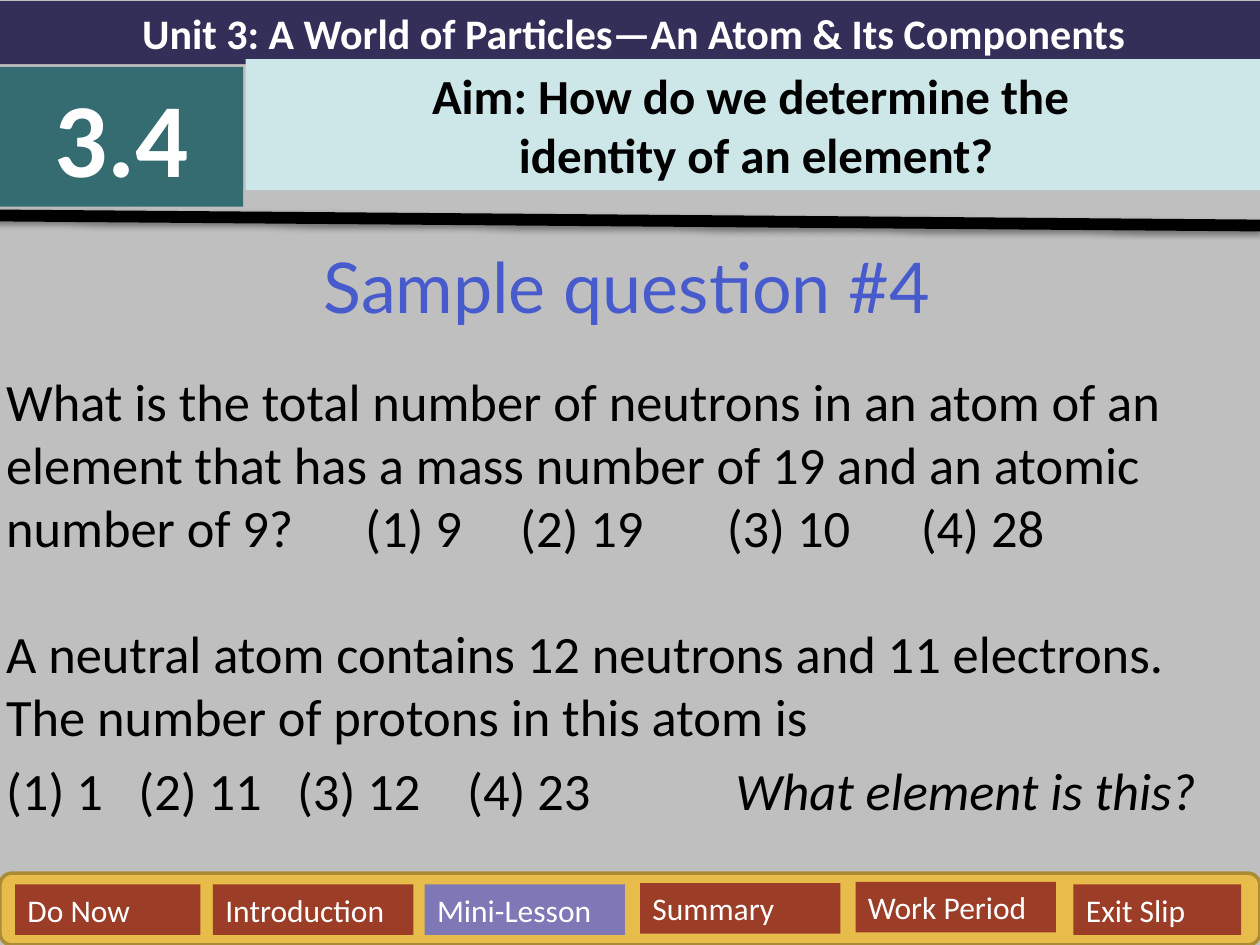
import pptx
import pptx.util
import pptx.dml.color
import pptx.enum.shapes
import pptx.enum.text
import pptx.oxml
import pptx.oxml.ns

Inches = pptx.util.Inches
Pt = pptx.util.Pt
Shape = pptx.enum.shapes.MSO_SHAPE
Align = pptx.enum.text.PP_ALIGN

COLORS = {
    "background": "BFBFBF", "unit": "342F59", "number": "346C71", "aim": "CDE6E8",
    "bar": "E8BC4A", "bar_line": "AC8B37", "button": "9C3D28", "current": "7E78B7",
    "heading": "475BCD", "black": "000000", "white": "FFFFFF",
}

# lines, (left, top, width, height), fill, text colour, size
HEADERS = [
    (["Unit 3: A World of Particles—An Atom & Its Components"],
     (0, 0.01, 10.06, 0.5), "unit", "white", 24),
    (["3.4"], (0, 0.53, 1.93, 1.11), "number", "white", 60),
    (["Aim: How do we determine the ", "identity of an element?"],
     (1.95, 0.47, 8.1, 1.04), "aim", "black", 28),
]

# label, left, top, width
BUTTONS = [
    ("Do Now", 0.12, 7.02, 1.47),
    ("Introduction", 1.69, 7.02, 1.59),
    ("Mini-Lesson", 3.37, 7.02, 1.59),
    ("Summary", 5.08, 7.01, 1.59),
    ("Work Period", 6.79, 7, 1.59),
    ("Exit Slip", 8.52, 7.02, 1.33),
]
BUTTON_HEIGHT = 0.4
CURRENT_BUTTON = "Mini-Lesson"

HEADING = "Sample question #4"
# text, space before in points, tab stops in inches, closing remark
QUESTIONS = [
    ("What is the total number of neutrons in an atom of an element that has a mass "
     "number of 19 and an atomic number of 9?\t(1) 9\t(2) 19\t(3) 10\t(4) 28",
     24, [2.85, 4.08, 5.72, 7.26], ""),
    ("A neutral atom contains 12 neutrons and 11 electrons. "
     "The number of protons in this atom is", 36, [], ""),
    ("(1) 1\t(2) 11\t(3) 12\t(4) 23\t", 6.5,
     [1.05, 2.31, 3.66, 5.79], "What element is this?"),
]


def rgb(name):
    return pptx.dml.color.RGBColor.from_string(COLORS[name])


def add_run(paragraph, text, size=30, color="black", font="Calibri",
            bold=False, italic=False):
    run = paragraph.add_run()
    run.text = text
    run.font.name = font
    run.font.size = Pt(size)
    run.font.bold = bold
    run.font.italic = italic
    run.font.color.rgb = rgb(color)


def add_box(slide, box, fill, preset=Shape.RECTANGLE, line=None):
    shape = slide.shapes.add_shape(preset, *map(Inches, box))
    shape.shadow.inherit = False
    shape.fill.solid()
    shape.fill.fore_color.rgb = rgb(fill)
    if line:
        shape.line.color.rgb = rgb(line)
        shape.line.width = Pt(2)
    else:
        shape.line.fill.background()
    return shape


def add_label(slide, lines, box, fill, align, **text_format):
    frame = add_box(slide, box, fill).text_frame
    frame.word_wrap = True
    frame.vertical_anchor = pptx.enum.text.MSO_ANCHOR.TOP
    for index, line in enumerate(lines):
        paragraph = frame.add_paragraph() if index else frame.paragraphs[0]
        paragraph.alignment = align
        add_run(paragraph, line, **text_format)


def add_divider(slide):
    divider = slide.shapes.add_connector(
        pptx.enum.shapes.MSO_CONNECTOR.STRAIGHT,
        *map(Inches, (-0.05, 1.71, 10, 1.79)))
    divider.line.color.rgb = rgb("black")
    divider.line.width = Pt(6.75)
    divider._element.spPr.append(pptx.oxml.parse_xml(
        f'<a:effectLst {pptx.oxml.ns.nsdecls("a")}>'
        f'<a:outerShdw blurRad="{Pt(3.1)}" dist="{Pt(1.6)}" dir="5400000" rotWithShape="0">'
        f'<a:srgbClr val="{COLORS["black"]}"><a:alpha val="38000"/></a:srgbClr>'
        '</a:outerShdw></a:effectLst>'))


def set_tabs(paragraph, stops):
    tabs = "".join(f'<a:tab pos="{Inches(stop)}" algn="l"/>' for stop in stops)
    paragraph._p.get_or_add_pPr().append(pptx.oxml.parse_xml(
        f'<a:tabLst {pptx.oxml.ns.nsdecls("a")}>{tabs}</a:tabLst>'))


def add_questions(slide):
    frame = slide.shapes.add_textbox(*map(Inches, (-0.05, 1.88, 10.05, 5))).text_frame
    frame.word_wrap = True
    heading = frame.paragraphs[0]
    heading.alignment = Align.CENTER
    add_run(heading, HEADING, size=40, color="heading", font="Lato")
    for text, space, stops, remark in QUESTIONS:
        paragraph = frame.add_paragraph()
        paragraph.space_before = Pt(space)
        if stops:
            set_tabs(paragraph, stops)
        add_run(paragraph, text)
        if remark:
            add_run(paragraph, remark, italic=True)


def main():
    presentation = pptx.Presentation()
    presentation.slide_width = Inches(10)
    presentation.slide_height = Inches(7.5)
    slide = presentation.slides.add_slide(presentation.slide_layouts[6])
    slide.background.fill.solid()
    slide.background.fill.fore_color.rgb = rgb("background")

    for lines, box, fill, color, size in HEADERS:
        add_label(slide, lines, box, fill, Align.CENTER, size=size, color=color, bold=True)
    add_divider(slide)
    add_box(slide, (0, 6.93, 10, 0.57), "bar", Shape.ROUNDED_RECTANGLE, "bar_line")
    for label, left, top, width in BUTTONS:
        fill = "current" if label == CURRENT_BUTTON else "button"
        add_label(slide, [label], (left, top, width, BUTTON_HEIGHT), fill, Align.LEFT,
                  size=18, color="white")
    add_questions(slide)
    presentation.save("out.pptx")


if __name__ == "__main__":
    main()
